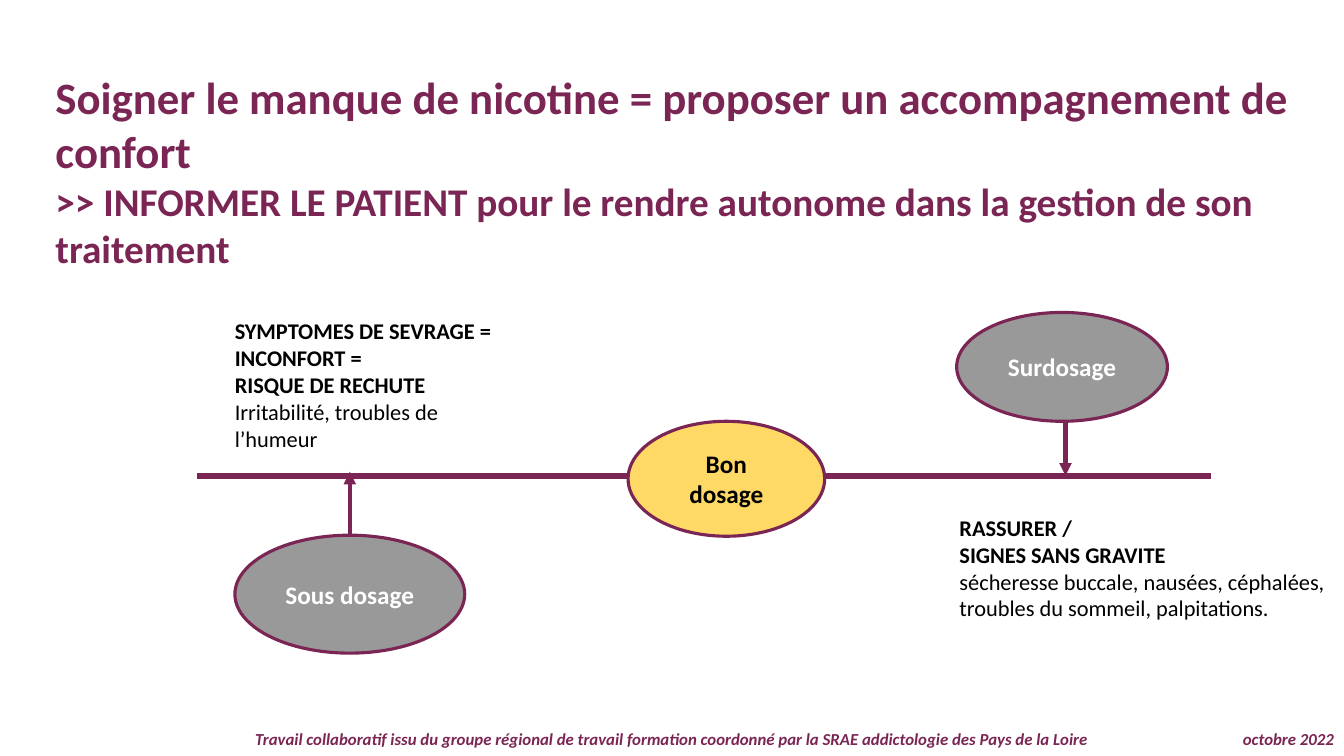
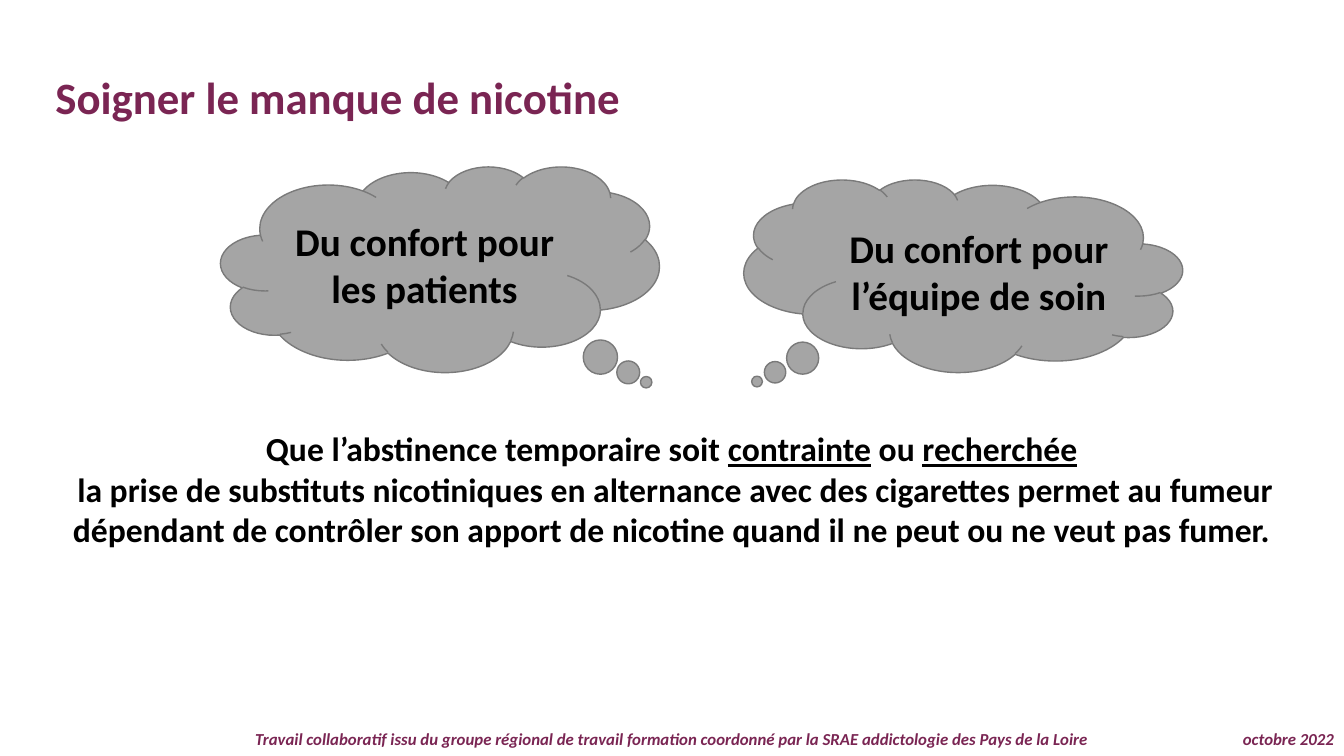
from dataclasses import dataclass

from lxml.etree import SubElement
from pptx import Presentation
from pptx.dml.color import RGBColor
from pptx.enum.shapes import MSO_CONNECTOR, MSO_SHAPE
from pptx.enum.text import MSO_ANCHOR, MSO_AUTO_SIZE, PP_ALIGN
from pptx.oxml.ns import qn
from pptx.util import Inches, Pt

WIDTH, HEIGHT = Inches(13.33), Inches(7.5)
FONT = "Calibri"
PLUM, BLACK, WHITE = "7A2553", "000000", "FFFFFF"
YELLOW, GREY, CLOUD_GREY, CLOUD_EDGE = "FFD966", "999999", "A5A5A5", "7A7A7A"
AXIS = 62.93
OVERDOSE_BOTTOM = 55.73
UNDERDOSE_TOP = 70.8


@dataclass
class Span:
    """A run of text with its own formatting."""
    text: str
    size: int
    color: str = BLACK
    bold: bool = True
    italic: bool = False
    underline: bool = False
    break_after: bool = False


def paint(hex_color):
    """Turn a hex string into a colour."""
    return RGBColor.from_string(hex_color)


def across(share):
    """Turn a percentage of the slide's width into a length."""
    return round(WIDTH * share / 100)


def down(share):
    """Turn a percentage of the slide's height into a length."""
    return round(HEIGHT * share / 100)


def area(left, top, width, height):
    """Turn percentages of the slide into a position and a size."""
    return across(left), down(top), across(width), down(height)


def write(frame, lines, align=PP_ALIGN.LEFT, anchor=MSO_ANCHOR.TOP, spacing=1.0):
    """Fill a text frame with paragraphs, each a list of spans."""
    frame.word_wrap = True
    frame.auto_size = MSO_AUTO_SIZE.NONE
    frame.vertical_anchor = anchor
    for index, spans in enumerate(lines):
        para = frame.add_paragraph() if index else frame.paragraphs[0]
        para.alignment = align
        para.line_spacing = spacing
        for span in spans:
            run = para.add_run()
            run.text = span.text
            run.font.name = FONT
            run.font.size = Pt(span.size)
            run.font.color.rgb = paint(span.color)
            run.font.bold = span.bold
            run.font.italic = span.italic
            run.font.underline = span.underline
            if span.break_after:
                para.add_line_break()


def add_text(page, place, lines, **layout):
    """Add a text box."""
    box = page.shapes.add_textbox(*area(*place))
    write(box.text_frame, lines, **layout)


def add_page(deck, title_lines, title_height):
    """Add a slide with its title and footers."""
    page = deck.slides.add_slide(deck.slide_layouts[5])
    title = page.shapes.title
    title.left, title.top, title.width, title.height = area(3.38, 8.53, 96.62, title_height)
    write(title.text_frame, title_lines)
    credit = ("Travail collaboratif issu du groupe régional de travail formation "
              "coordonné par la SRAE addictologie des Pays de la Loire")
    footers = [(0, 100, credit, PP_ALIGN.CENTER),
               (88.13, 11.87, "octobre 2022", PP_ALIGN.RIGHT)]
    for left, width, text, align in footers:
        add_text(page, (left, 96, width, 4), [[Span(text, 12, PLUM, italic=True)]],
                 align=align, spacing=0.9)
    return page


def add_figure(page, preset, place, lines, fill, edge, weight):
    """Add a filled and outlined shape with centred text."""
    figure = page.shapes.add_shape(preset, *area(*place))
    figure.shadow.inherit = False
    figure.fill.solid()
    figure.fill.fore_color.rgb = paint(fill)
    figure.line.color.rgb = paint(edge)
    figure.line.width = Pt(weight)
    write(figure.text_frame, lines, PP_ALIGN.CENTER, MSO_ANCHOR.MIDDLE)
    return figure


def add_oval(page, preset, place, words, fill, color):
    """Add a plum-edged dosage oval."""
    add_figure(page, preset, place, [[Span(word, 18, color)] for word in words],
               fill, PLUM, 2.25)


def add_cloud(page, place, text, flipped=False):
    """Add a thought cloud, mirrored if asked."""
    cloud = add_figure(page, MSO_SHAPE.CLOUD_CALLOUT, place, [[Span(text, 28)]],
                       CLOUD_GREY, CLOUD_EDGE, 1)
    cloud.adjustments[0], cloud.adjustments[1] = 0.47, 0.55
    if flipped:
        cloud.element.spPr.find(qn("a:xfrm")).set("flipH", "1")


def add_line(page, start, end, weight, arrow=False):
    """Add a straight plum line, with an arrowhead at its end if asked."""
    line = page.shapes.add_connector(
        MSO_CONNECTOR.STRAIGHT, across(start[0]), down(start[1]), across(end[0]), down(end[1]))
    line.line.color.rgb = paint(PLUM)
    line.line.width = Pt(weight)
    properties = line.element.spPr
    if arrow:
        SubElement(properties.find(qn("a:ln")), qn("a:tailEnd")).set("type", "triangle")
    SubElement(properties, qn("a:effectLst"))


def add_signs(page, place, headings, detail):
    """Add bold headings above a plain detail."""
    lines = [[Span(heading, 16)] for heading in headings]
    add_text(page, place, lines + [[Span(detail, 16, bold=False)]])


def build_dosage(deck):
    """Build the slide on under- and overdosage."""
    page = add_page(deck, [
        [Span("Soigner le manque de nicotine = proposer un accompagnement de confort", 32, PLUM)],
        [Span(">> INFORMER LE PATIENT pour le rendre autonome dans la gestion "
              "de son traitement", 28, PLUM)],
    ], 34.53)
    add_line(page, (14.63, AXIS), (90.08, AXIS), 4.5)
    add_oval(page, MSO_SHAPE.FLOWCHART_CONNECTOR, (46.73, 55.73, 14.63, 15.2),
             ["Bon", "dosage"], YELLOW, BLACK)
    add_oval(page, MSO_SHAPE.OVAL, (71.18, OVERDOSE_BOTTOM - 14.4, 15.68, 14.4),
             ["Surdosage"], GREY, WHITE)
    add_oval(page, MSO_SHAPE.OVAL, (17.48, UNDERDOSE_TOP, 17.1, 15.6),
             ["Sous dosage"], GREY, WHITE)
    add_signs(page, (16.73, 41.33, 20.93, 19.33),
              ["SYMPTOMES DE SEVRAGE =", "INCONFORT =", "RISQUE DE RECHUTE"],
              "Irritabilité, troubles de l’humeur")
    add_signs(page, (70.65, 67.33, 29.35, 15.73),
              ["RASSURER /", "SIGNES SANS GRAVITE"],
              "sécheresse buccale, nausées, céphalées, troubles du sommeil, palpitations.")
    add_line(page, (79.28, OVERDOSE_BOTTOM), (79.28, AXIS), 3, arrow=True)
    add_line(page, (26.03, UNDERDOSE_TOP), (26.03, 62.4), 3, arrow=True)


def build_comfort(deck):
    """Build the slide on comfort for patients and carers."""
    page = add_page(deck, [[Span("Soigner le manque de nicotine", 32, PLUM)]], 8.53)
    add_text(page, (4.58, 56, 91.35, 17.47), [[
        Span("Que l’abstinence temporaire soit ", 24),
        Span("contrainte", 24, underline=True),
        Span(" ou ", 24),
        Span("recherchée", 24, underline=True),
        Span(" ", 24, break_after=True),
        Span("la prise de substituts nicotiniques en alternance avec des cigarettes permet "
             "au fumeur dépendant de contrôler son apport de nicotine quand il ne peut "
             "ou ne veut pas fumer. ", 24),
    ]], align=PP_ALIGN.CENTER)
    add_cloud(page, (16.43, 22, 32.63, 27.2), "Du confort pour les patients")
    add_cloud(page, (55.35, 23.73, 32.63, 25.47), "Du confort pour l’équipe de soin",
              flipped=True)


def main():
    """Build and save the deck."""
    deck = Presentation()
    deck.slide_width, deck.slide_height = WIDTH, HEIGHT
    build_dosage(deck)
    build_comfort(deck)
    deck.save("out.pptx")


if __name__ == "__main__":
    main()
